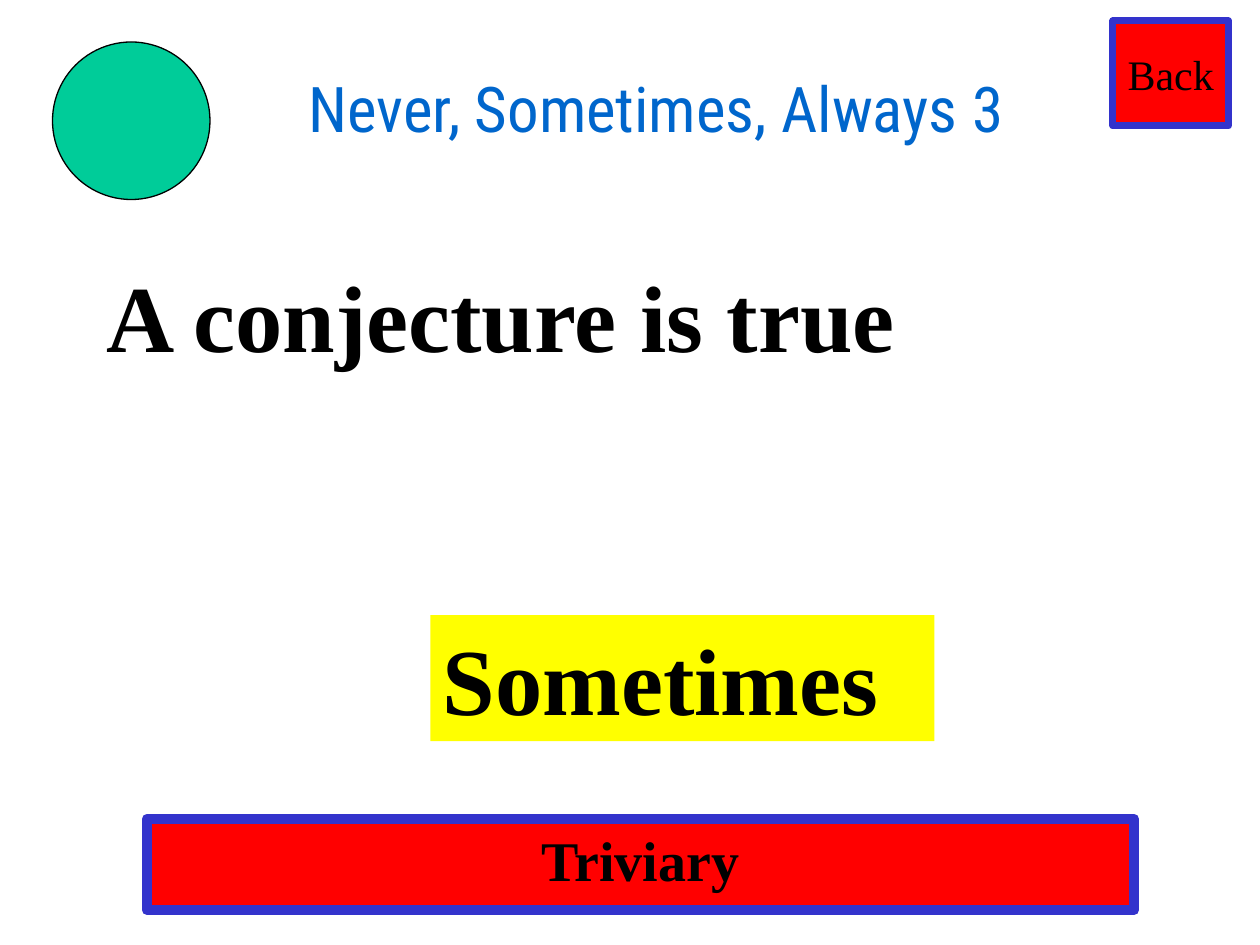
from pptx import Presentation
from pptx.dml.color import RGBColor
from pptx.enum.shapes import MSO_SHAPE
from pptx.enum.text import MSO_ANCHOR, PP_ALIGN
from pptx.util import Pt

RECTANGLE, OVAL = MSO_SHAPE.RECTANGLE, MSO_SHAPE.OVAL
LEFT, CENTER = PP_ALIGN.LEFT, PP_ALIGN.CENTER
TOP, MIDDLE = MSO_ANCHOR.TOP, MSO_ANCHOR.MIDDLE
SERIF, CONDENSED = "Times New Roman", "Roboto Condensed"
BLACK, RED, BLUE, YELLOW, GREEN = "000000", "FF0000", "3333CC", "FFFF00", "00CC99"


def color(value):
    return RGBColor.from_string(value)


def add_panel(page, box, kind, fill, line=None, line_width=0):
    panel = page.shapes.add_shape(kind, *map(Pt, box))
    panel.shadow.inherit = False
    panel.fill.solid()
    panel.fill.fore_color.rgb = color(fill)
    if line:
        panel.line.color.rgb = color(line)
        panel.line.width = Pt(line_width)
    else:
        panel.line.fill.background()
    return panel


def write(shape, text, size, font=SERIF, ink=BLACK, bold=False,
          align=LEFT, anchor=TOP, wrap=True):
    frame = shape.text_frame
    frame.word_wrap = wrap
    frame.vertical_anchor = anchor
    para = frame.paragraphs[0]
    para.alignment = align
    span = para.add_run()
    span.text = text
    span.font.name = font
    span.font.size = Pt(size)
    span.font.bold = bold
    span.font.color.rgb = color(ink)


def add_title(page, box, text):
    title = page.shapes.add_textbox(*map(Pt, box))
    write(title, text, 36, font=CONDENSED, ink="0066CC", align=CENTER, wrap=False)


def add_question(page, box, text):
    question = page.shapes.add_textbox(*map(Pt, box))
    write(question, text, 54, bold=True)


def add_answer(page, box, text):
    answer = add_panel(page, box, RECTANGLE, YELLOW)
    write(answer, text, 54, bold=True)


def add_back_button(page, box):
    button = add_panel(page, box, RECTANGLE, RED, BLUE, 4)
    write(button, "Back", 24, align=CENTER, anchor=MIDDLE, wrap=False)


def add_game_banner(page, box, text):
    banner = add_panel(page, box, RECTANGLE, RED, BLUE, 6)
    write(banner, text, 32, bold=True, align=CENTER)


def main():
    deck = Presentation()
    deck.slide_width, deck.slide_height = Pt(720), Pt(540)
    page = deck.slides.add_slide(deck.slide_layouts[6])
    page.background.fill.solid()
    page.background.fill.fore_color.rgb = color("FFFFFF")

    add_game_banner(page, (84, 468, 564, 52), "Triviary")
    add_question(page, (54, 144, 478, 72), "A conjecture is true")
    add_back_button(page, (636, 12, 66, 60))
    add_answer(page, (246, 351.5, 288, 72), "Sometimes")
    add_panel(page, (30, 24, 90, 90), OVAL, GREEN, BLACK, 0.75)
    add_title(page, (138, 36, 474, 78), "Never, Sometimes, Always 3")

    deck.save("out.pptx")


if __name__ == "__main__":
    main()
